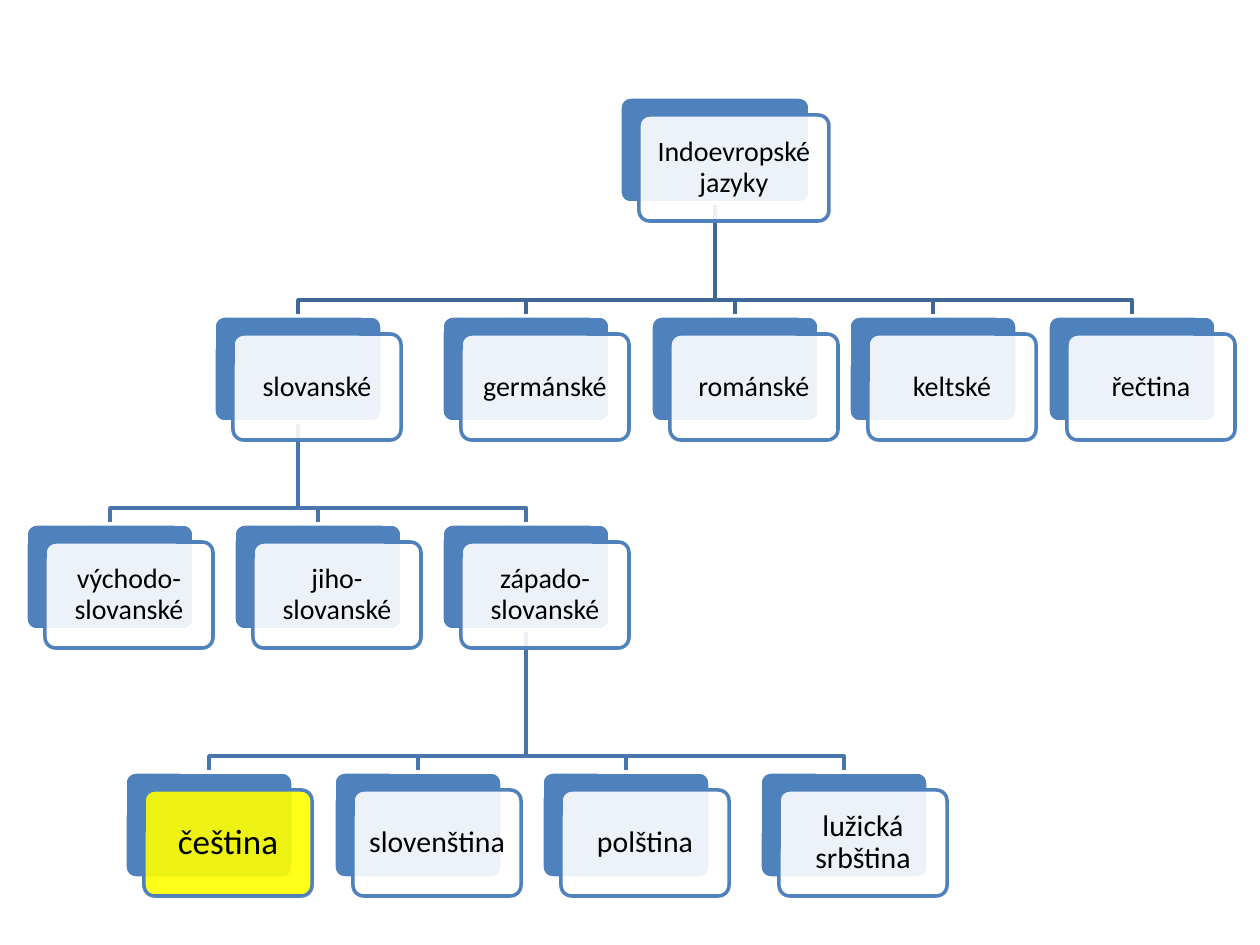
from dataclasses import dataclass

from lxml import etree
from pptx import Presentation
from pptx.dml.color import RGBColor
from pptx.enum.shapes import MSO_SHAPE
from pptx.enum.text import MSO_ANCHOR as Anchor, PP_ALIGN as Align
from pptx.oxml.ns import qn
from pptx.util import Inches, Pt

PX = Inches(10) / 1260
COLORS = {
    "card": "4F81BD",
    "white": "FFFFFF",
    "highlight": "FFFF00",
    "text": "000000",
    "root_link": "3F6797",
    "link": "4875AC",
}
ROW_TOPS = [97, 316, 524, 772]
CARD_HEIGHT = 106
SHIFT_X, SHIFT_Y = 19, 18
LINK_DROP = 16
INSET = 6


@dataclass
class Language:
    name: str
    left: int
    row: int
    size: int = 16
    width: int = 168
    face: str = "white"
    children: tuple = ()

    @property
    def top(self):
        return ROW_TOPS[self.row]

    @property
    def center(self):
        return self.left + self.width // 2


WEST_SLAVIC = (
    Language("čeština", 125, 3, size=20, face="highlight"),
    Language("slovenština", 334, 3, size=17),
    Language("polština", 542, 3, size=17),
    Language("lužická srbština", 760, 3, size=17),
)
SLAVIC = (
    Language("východo-slovanské", 26, 2),
    Language("jiho-slovanské", 234, 2),
    Language("západo-slovanské", 442, 2, children=WEST_SLAVIC),
)
BRANCHES = (
    Language("slovanské", 214, 1, children=SLAVIC),
    Language("germánské", 442, 1),
    Language("románské", 651, 1),
    Language("keltské", 849, 1),
    Language("řečtina", 1048, 1),
)
ROOT = Language("Indoevropské jazyky", 620, 0, width=190, children=BRANCHES)


def px(length):
    return round(length * PX)


def rgb(name):
    return RGBColor.from_string(COLORS[name])


def set_line(shape, color):
    shape.shadow.inherit = False
    shape.line.color.rgb = rgb(color)
    shape.line.width = Pt(2)


def family(language):
    yield language
    for child in language.children:
        yield from family(child)


def add_link(slide, parent, child):
    start = parent.center, parent.top + CARD_HEIGHT
    bend = child.top - LINK_DROP
    corners = [(parent.center, bend), (child.center, bend), (child.center, child.top)]
    builder = slide.shapes.build_freeform(*map(px, start), scale=1.0)
    builder.add_line_segments([(px(x), px(y)) for x, y in corners], close=False)
    link = builder.convert_to_shape()
    link.fill.background()
    set_line(link, "link" if parent.row else "root_link")


def add_plate(slide, left, top, width, fill, line):
    plate = slide.shapes.add_shape(
        MSO_SHAPE.ROUNDED_RECTANGLE, px(left), px(top), px(width), px(CARD_HEIGHT)
    )
    plate.adjustments[0] = 0.1
    plate.fill.solid()
    plate.fill.fore_color.rgb = rgb(fill)
    set_line(plate, line)
    return plate


def set_opacity(plate, percent):
    color = plate.fill._xPr.find(qn("a:solidFill"))[0]
    etree.SubElement(color, qn("a:alpha")).set("val", str(percent * 1000))


def add_label(plate, text, size):
    frame = plate.text_frame
    frame.text = text
    frame.word_wrap = True
    frame.vertical_anchor = Anchor.MIDDLE
    frame.margin_left = frame.margin_right = px(INSET)
    frame.margin_top = frame.margin_bottom = px(INSET)
    paragraph = frame.paragraphs[0]
    paragraph.alignment = Align.CENTER
    paragraph.line_spacing = 0.9
    font = paragraph.runs[0].font
    font.name = "Calibri"
    font.size = Pt(size)
    font.color.rgb = rgb("text")


def add_card(slide, language):
    left, top, width = language.left, language.top, language.width
    add_plate(slide, left, top, width, "card", "white")
    front = add_plate(slide, left + SHIFT_X, top + SHIFT_Y, width, language.face, "card")
    set_opacity(front, 90)
    add_label(front, language.name, language.size)


def main():
    deck = Presentation()
    deck.slide_width, deck.slide_height = px(1260), px(945)
    slide = deck.slides.add_slide(deck.slide_layouts[6])
    for parent in family(ROOT):
        for child in parent.children:
            add_link(slide, parent, child)
    for language in family(ROOT):
        add_card(slide, language)
    deck.save("out.pptx")


if __name__ == "__main__":
    main()
